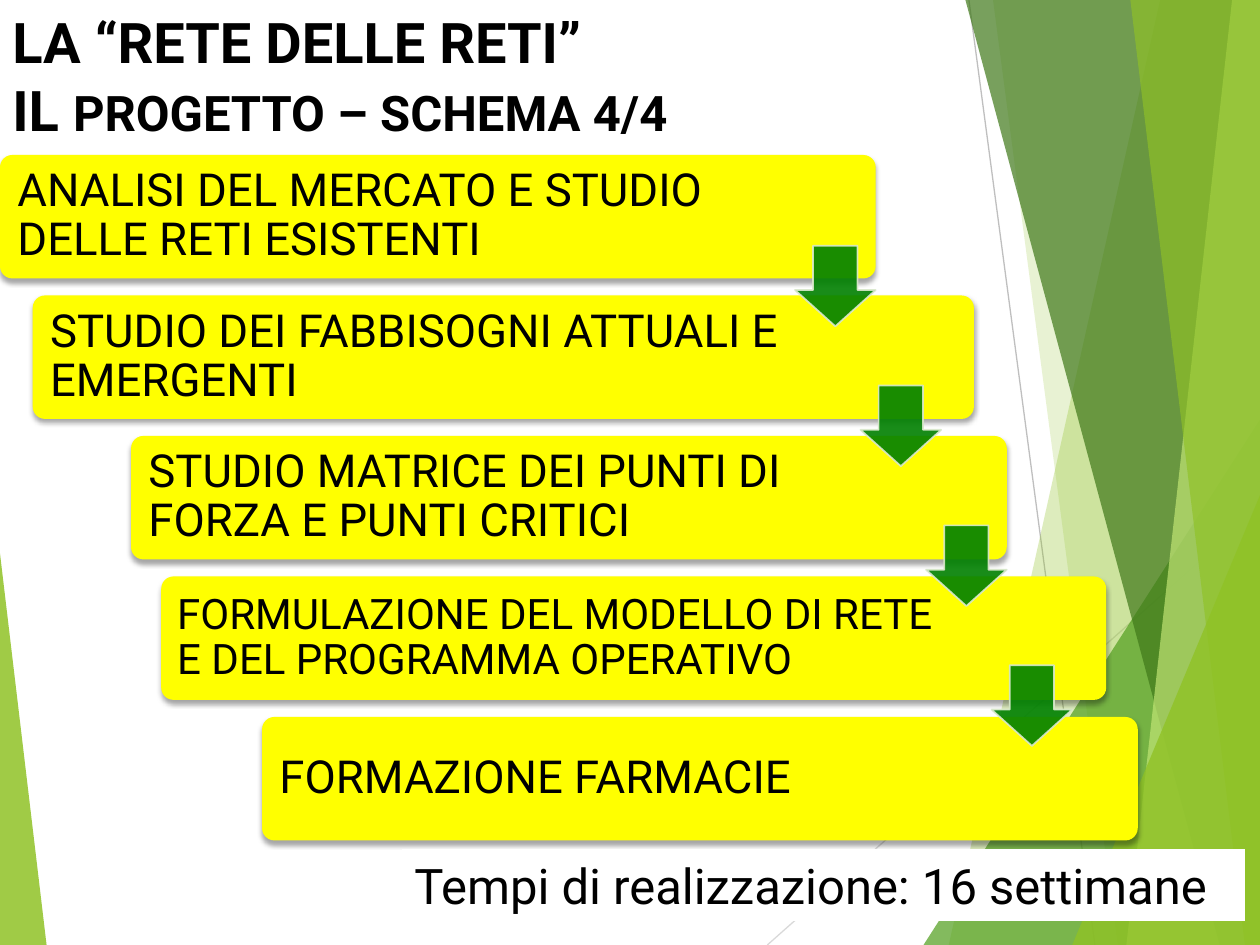
"""Build the five-step project schema slide with its faceted green backdrop."""
from lxml import etree
from pptx import Presentation
from pptx.dml.color import RGBColor
from pptx.enum import shapes, text
from pptx.oxml import ns
from pptx.util import Inches, Pt

COLORS = {
    "black": "000000", "white": "FFFFFF", "yellow": "FFFF00", "arrow": "008000",
    "arrow_edge": "DBE9CD", "lime": "90C226", "green": "54A021",
    "forest": "3F7819", "pale": "C0E474", "gray": "BFBFBF", "silver": "D9D9D9",
}
MSO = shapes.MSO_SHAPE


def paint(fill, color, alpha=100):
    fill.solid()
    fill.fore_color.rgb = RGBColor.from_string(COLORS[color])
    if alpha < 100:
        clr = fill._xPr.find(".//" + ns.qn("a:srgbClr"))
        etree.SubElement(clr, ns.qn("a:alpha"), val=str(alpha * 1000))


def style(r, size, bold=False):
    r.font.name = "Roboto"
    r.font.size = Pt(size)
    r.font.bold = bold
    r.font.color.rgb = RGBColor.from_string(COLORS["black"])


prs = Presentation()
prs.slide_width, prs.slide_height = Inches(10), Inches(7.5)
s = prs.slides.add_slide(prs.slide_layouts[6])

for x1, y1, x2, y2, color in [(7.69, 0, 8.69, 7.5, "gray"), (10, 4.03, 6.09, 7.5, "silver")]:
    line = s.shapes.add_connector(shapes.MSO_CONNECTOR.STRAIGHT, Inches(x1), Inches(y1),
                                  Inches(x2), Inches(y2))
    line.line.width = Pt(0.75)
    paint(line.line.fill, color)
    etree.SubElement(line._element.spPr, ns.qn("a:effectLst"))

backdrop = [
    ("facet", (9.21, 7.53), "lime", 30),
    ("facet", (7.88, 8.87), "lime", 20),
    ("triangle", (7.33, 3.33, 2.67, 4.17, 1), "green", 72),
    ("facet", (7.66, 9.68), "forest", 70),
    ("facet", (9.78, 8.94), "pale", 70),
    ("facet", (8.97, 9.88), "lime", 65),
    ("triangle", (8.51, 3.93, 1.49, 3.57, 1), "lime", 80),
    ("triangle", (0, 4.39, 0.37, 3.11, 0), "lime", 85),
]
for kind, geometry, color, alpha in backdrop:
    if kind == "facet":
        top_x, bottom_x = geometry
        corners = [(10, -0.01), (10, 7.5), (bottom_x, 7.5)]
        fb = s.shapes.build_freeform(Inches(top_x), Inches(-0.01))
        fb.add_line_segments([(Inches(x), Inches(y)) for x, y in corners])
        sp = fb.convert_to_shape()
    else:
        *box, apex = geometry
        sp = s.shapes.add_shape(MSO.ISOSCELES_TRIANGLE, *map(Inches, box))
        sp.adjustments[0] = apex
    paint(sp.fill, color, alpha)
    sp.line.fill.background()
    sp.shadow.inherit = False

title = s.shapes.add_textbox(Inches(0), Inches(-0.03), Inches(7.99), Inches(1.25))
tf = title.text_frame
tf.word_wrap = True
tf.vertical_anchor = text.MSO_ANCHOR.MIDDLE
p = tf.paragraphs[0]
p.text = "LA “RETE DELLE RETI”\vIL "
p.add_run().text = "PROGETTO – SCHEMA 4/4"
for r, size in zip(p.runs, (32, 32, 28)):
    style(r, size, True)

steps = [
    ("ANALISI DEL MERCATO E STUDIO DELLE RETI ESISTENTI", 0, 6.95, 5.78, 26),
    ("STUDIO DEI FABBISOGNI ATTUALI E EMERGENTI", 0.26, 7.47, 6.17, 26),
    ("STUDIO MATRICE DEI PUNTI DI FORZA E PUNTI CRITICI", 1.04, 6.95, 5.74, 26),
    ("FORMULAZIONE DEL MODELLO DI RETE E DEL PROGRAMMA OPERATIVO", 1.28, 7.5, 6.19, 24),
    ("FORMAZIONE FARMACIE", 2.08, 6.95, 5.74, 26),
]
for i, (label, left, width, text_width, size) in enumerate(steps):
    sp = s.shapes.add_shape(MSO.ROUNDED_RECTANGLE, Inches(left), Inches(1.23 + 1.115 * i),
                            Inches(width), Inches(0.98))
    sp.adjustments[0] = 0.1
    paint(sp.fill, "yellow")
    sp.line.fill.background()
    sp.shadow.inherit = False
    effects = sp._element.spPr.find(ns.qn("a:effectLst"))
    shadow = etree.SubElement(effects, ns.qn("a:outerShdw"), blurRad=str(Pt(3)),
                              dist=str(Pt(2)), dir="5400000", rotWithShape="0")
    clr = etree.SubElement(shadow, ns.qn("a:srgbClr"), val=COLORS["black"])
    etree.SubElement(clr, ns.qn("a:alpha"), val="35000")
    tf = sp.text_frame
    tf.word_wrap = True
    tf.vertical_anchor = text.MSO_ANCHOR.MIDDLE
    inset = 0.1 if size == 24 else 0.11
    tf.margin_left = tf.margin_top = tf.margin_bottom = Inches(inset)
    tf.margin_right = Inches(width - text_width - 0.06 + inset)
    p = tf.paragraphs[0]
    p.text = label
    p.alignment = text.PP_ALIGN.LEFT
    p.line_spacing = 0.9
    style(p.runs[0], size)

for i in range(len(steps) - 1):
    sp = s.shapes.add_shape(MSO.DOWN_ARROW, Inches(6.31 + 0.52 * i), Inches(1.95 + 1.11 * i),
                            Inches(0.64), Inches(0.64))
    sp.adjustments[0], sp.adjustments[1] = 0.55, 0.45
    paint(sp.fill, "arrow", 90)
    sp.line.width = Pt(1)
    paint(sp.line.fill, "arrow_edge", 90)
    sp.shadow.inherit = False

sp = s.shapes.add_shape(MSO.RECTANGLE, Inches(3.19), Inches(6.74), Inches(6.69), Inches(0.57))
paint(sp.fill, "white")
sp.line.fill.background()
sp.shadow.inherit = False
tf = sp.text_frame
tf.word_wrap = True
tf.vertical_anchor = text.MSO_ANCHOR.TOP
p = tf.paragraphs[0]
p.text = "Tempi di realizzazione: 16 settimane"
p.alignment = text.PP_ALIGN.LEFT
style(p.runs[0], 28)

prs.save("out.pptx")
